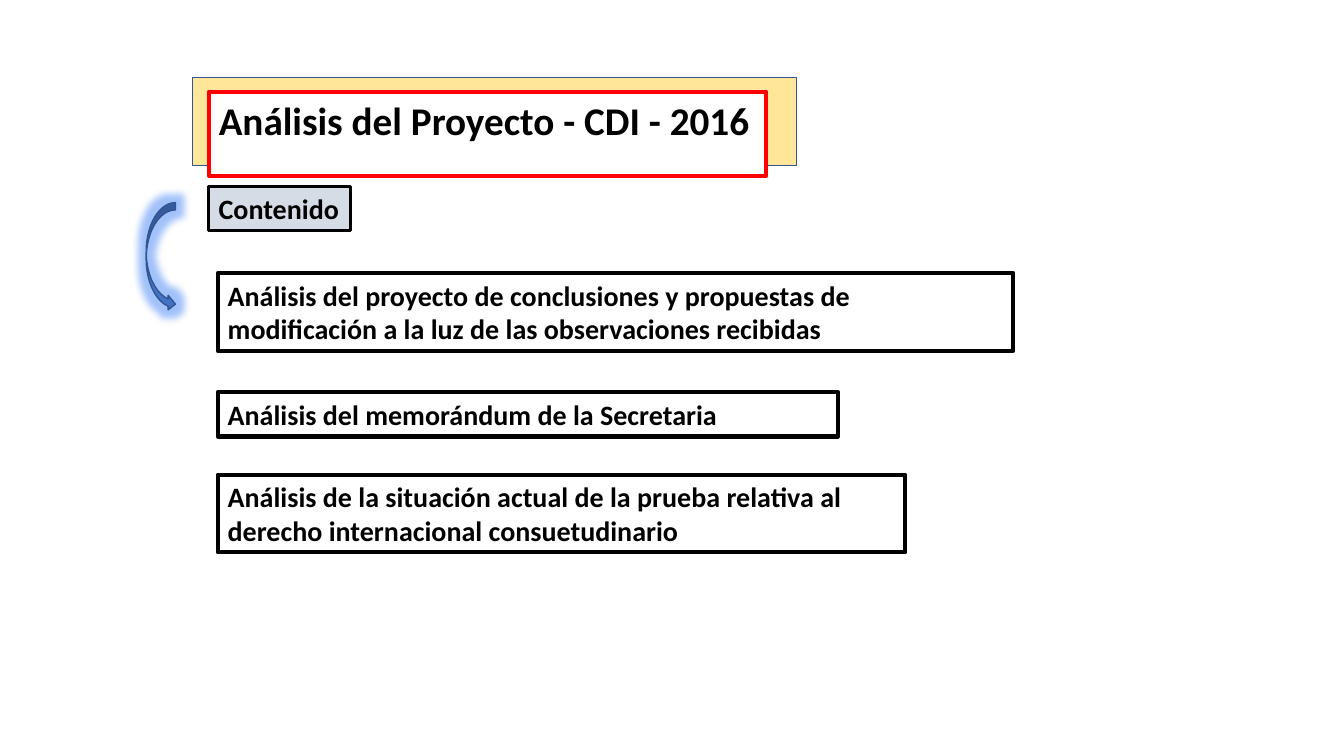
from dataclasses import dataclass

from lxml.etree import SubElement
from pptx import Presentation
from pptx.dml.color import RGBColor
from pptx.enum.shapes import MSO_SHAPE
from pptx.enum.text import MSO_ANCHOR, MSO_AUTO_SIZE, PP_ALIGN
from pptx.oxml.ns import qn
from pptx.util import Inches, Pt


@dataclass(frozen=True)
class Theme:
    font: str = "Calibri"
    title_size: float = 28
    body_size: float = 20
    thin: float = 1
    medium: float = 2.25
    thick: float = 3
    ink: str = "000000"
    paper: str = "FFFFFF"
    banner: str = "FFE699"
    frame: str = "FF0000"
    label: str = "D6DCE5"
    accent: str = "4472C4"
    accent_edge: str = "325491"


@dataclass(frozen=True)
class Box:
    left: float
    top: float
    width: float
    height: float

    def inside(self, left, top, width, height):
        return Box(self.left + left, self.top + top, width, height)


THEME = Theme()
CELL = Inches(1)
COLUMNS, ROWS = 13.33, 7.5
HEADING = Box(1.91, 0.77, 5.99, 0.87)
CONTENTS = Box(1.45, 1.85, 8.6, 3.63)
LINE_HEIGHT, PADDING = 0.33, 0.11
TOPICS = [
    ("Análisis del proyecto de conclusiones y propuestas de modificación "
     "a la luz de las observaciones recibidas", 0.86, 7.89, 2),
    ("Análisis del memorándum de la Secretaria", 2.04, 6.15, 1),
    ("Análisis de la situación actual de la prueba relativa al "
     "derecho internacional consuetudinario", 2.86, 6.82, 2),
]


def apply(target, values):
    for name, value in values.items():
        setattr(target, name, value)


def place(part, box):
    apply(part, {
        "left": round(box.left * CELL),
        "top": round(box.top * CELL),
        "width": round(box.width * CELL),
        "height": round(box.height * CELL),
    })


def paint(part, fill, edge, weight):
    if fill:
        part.fill.solid()
        part.fill.fore_color.rgb = RGBColor.from_string(fill)
    else:
        part.fill.background()
    part.line.color.rgb = RGBColor.from_string(edge)
    part.line.width = Pt(weight)


def write(part, wording, size, wrap):
    frame = part.text_frame
    frame.text = wording
    apply(frame, {
        "word_wrap": wrap,
        "auto_size": MSO_AUTO_SIZE.SHAPE_TO_FIT_TEXT,
        "vertical_anchor": MSO_ANCHOR.TOP,
    })
    paragraph = frame.paragraphs[0]
    paragraph.alignment = PP_ALIGN.LEFT
    font = paragraph.runs[0].font
    apply(font, {"name": THEME.font, "size": Pt(size), "bold": True})
    font.color.rgb = RGBColor.from_string(THEME.ink)


def add_preset(slide, preset, box, fill, edge, weight):
    part = slide.shapes.add_shape(preset, 0, 0, 0, 0)
    place(part, box)
    paint(part, fill, edge, weight)
    part.shadow.inherit = False
    return part


def add_label(slide, box, wording, fill, weight, wrap):
    label = add_preset(slide, MSO_SHAPE.RECTANGLE, box, fill, THEME.ink, weight)
    write(label, wording, THEME.body_size, wrap)


def add_glow(part, radius, color):
    effects = part.element.spPr.find(qn("a:effectLst"))
    glow = SubElement(effects, qn("a:glow"), rad=str(Pt(radius)))
    tint = SubElement(glow, qn("a:srgbClr"), val=color)
    SubElement(tint, qn("a:satMod"), val="175000")
    SubElement(tint, qn("a:alpha"), val="40000")


def build_heading(slide, box):
    banner = add_preset(slide, MSO_SHAPE.RECTANGLE, box,
                        THEME.banner, THEME.accent_edge, THEME.thin)
    title = slide.shapes.title
    title.element.addprevious(banner.element)
    place(title, box.inside(0.16, 0.14, 5.53, 0.61))
    paint(title, THEME.paper, THEME.frame, THEME.thick)
    write(title, "Análisis del Proyecto - CDI - 2016", THEME.title_size, False)


def build_contents(slide, box):
    add_label(slide, box.inside(0.62, 0, 1.41, LINE_HEIGHT + PADDING),
              "Contenido", THEME.label, THEME.medium, False)
    for wording, top, width, lines in TOPICS:
        height = lines * LINE_HEIGHT + PADDING
        add_label(slide, box.inside(0.71, top, width, height),
                  wording, None, THEME.thick, True)
    arrow = add_preset(slide, MSO_SHAPE.CURVED_RIGHT_ARROW,
                       box.inside(0, 0.16, 0.29, 1.08),
                       THEME.accent, THEME.accent_edge, THEME.thin)
    add_glow(arrow, 11, THEME.accent)


def main():
    deck = Presentation()
    apply(deck, {"slide_width": round(COLUMNS * CELL),
                 "slide_height": round(ROWS * CELL)})
    slide = deck.slides.add_slide(deck.slide_layouts[5])
    build_heading(slide, HEADING)
    build_contents(slide, CONTENTS)
    deck.save("out.pptx")


if __name__ == "__main__":
    main()
